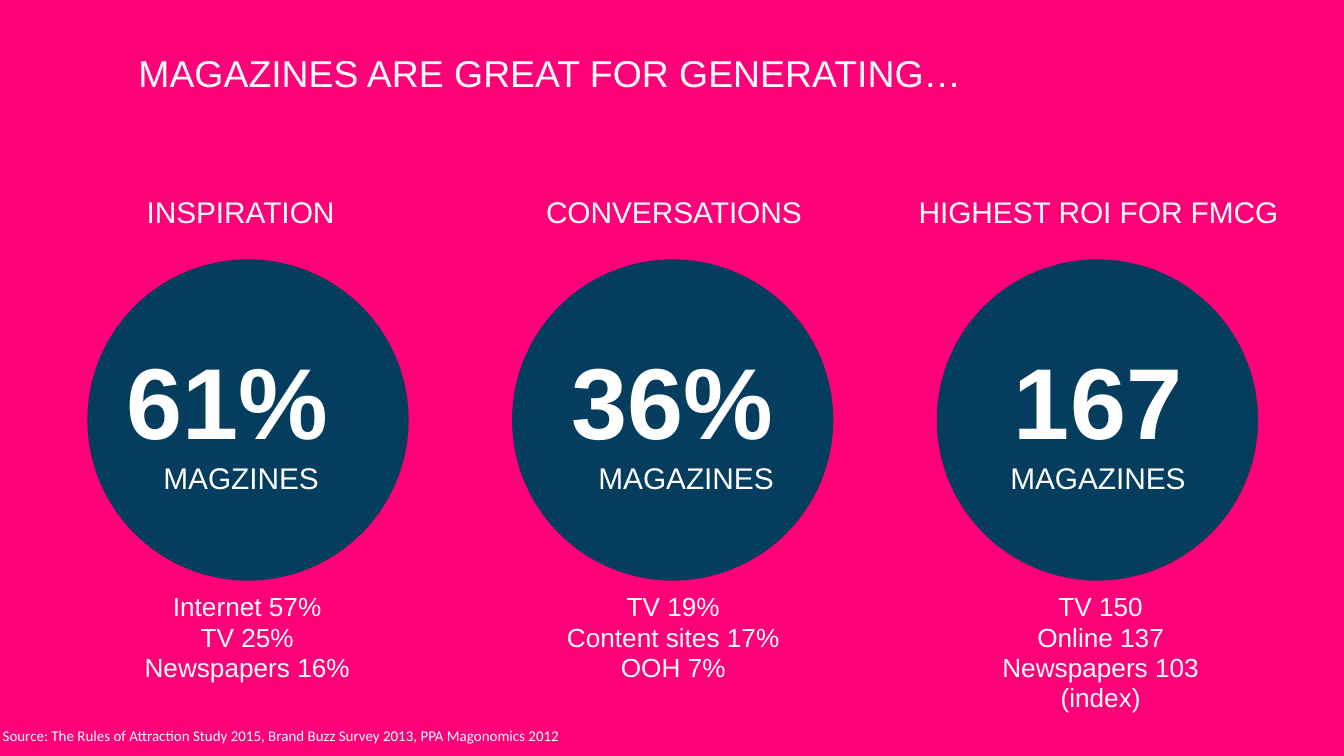
"""Build the slide on what magazines are great for generating."""
from dataclasses import dataclass

from lxml.etree import SubElement
from pptx import Presentation
from pptx.dml.color import RGBColor
from pptx.enum.shapes import MSO_SHAPE as Shape
from pptx.enum.text import MSO_ANCHOR as Anchor, MSO_AUTO_SIZE as Fit, PP_ALIGN as Align
from pptx.oxml.ns import qn
from pptx.util import Inches, Pt

PINK = RGBColor(0xFF, 0x00, 0x79)
NAVY = RGBColor(0x05, 0x3D, 0x5E)
WHITE = RGBColor(0xFF, 0xFF, 0xFF)
LEFT, STEP, SIZE = 0.65, 3.16, 2.39


@dataclass
class Span:
    left: float
    width: float


@dataclass
class Topic:
    head: str
    score: str
    label: str
    rows: list[str]
    top: Span
    mid: Span
    low: Span


TOPICS = [
    Topic("INSPIRATION", "61% ", "MAGZINES",
          ["Internet 57%", "TV 25%", "Newspapers 16%"],
          Span(0.63, 2.32), Span(0.25, 3.09), Span(0.21, 3.26)),
    Topic("CONVERSATIONS", "36% ", "MAGAZINES",
          ["TV 19%", "Content sites 17%", "OOH 7%"],
          Span(3.52, 2.99), Span(3.86, 2.49), Span(3.65, 2.72)),
    Topic("HIGHEST ROI FOR FMCG", "167", "MAGAZINES",
          ["TV 150", "Online 137", "Newspapers 103", "(index)"],
          Span(6.68, 2.99), Span(7.01, 2.32), Span(6.71, 2.96)),
]


def place(box, span: Span, top: float, high: float):
    """Move a box and give its text frame plain settings."""
    box.left, box.top = Inches(span.left), Inches(top)
    box.width, box.height = Inches(span.width), Inches(high)
    frame = box.text_frame
    frame.word_wrap = True
    frame.auto_size = Fit.NONE
    frame.vertical_anchor = Anchor.TOP
    return frame


def write(frame, text: str, *, size: float, font: str = "Arial", bold: bool = False,
          align=Align.CENTER, line=None, gap: float = 0) -> None:
    """Add one formatted paragraph to a frame."""
    first = not frame.text
    para = frame.paragraphs[0] if first else frame.add_paragraph()
    para.alignment = align
    para.line_spacing = line
    para.space_before = Pt(0 if first else gap)
    props = para._p.get_or_add_pPr()
    props.set("marL", "0")
    props.set("indent", "0")
    SubElement(props, qn("a:buNone"))
    run = para.add_run()
    run.text = text
    run.font.name, run.font.size, run.font.bold = font, Pt(size), bold
    run.font.color.rgb = WHITE


def disc(slide, left: float) -> None:
    """Draw one navy disc."""
    oval = slide.shapes.add_shape(Shape.OVAL, Inches(left), Inches(1.93),
                                  Inches(SIZE), Inches(SIZE))
    oval.shadow.inherit = False
    oval.fill.solid()
    oval.fill.fore_color.rgb = NAVY
    oval.line.fill.background()


def label(slide, span: Span, top: float, high: float):
    """Add an empty text box and return its frame."""
    return place(slide.shapes.add_textbox(0, 0, 0, 0), span, top, high)


def draw(slide, topic: Topic, body, left: float) -> None:
    """Draw one topic with its disc, figures and list."""
    disc(slide, left)
    write(label(slide, topic.top, 1.24, 0.7), topic.head, size=16, line=Pt(30))
    frame = label(slide, topic.mid, 2.47, 1.31)
    write(frame, topic.score, size=54, bold=True)
    write(frame, topic.label, size=16)
    frame = place(body, topic.low, 4.39, 1.21)
    for row in topic.rows:
        write(frame, row, size=14, line=0.8, gap=2.8)


def main() -> None:
    """Build and save the deck."""
    deck = Presentation()
    deck.slide_width = Inches(10)
    deck.slide_height = deck.slide_width * 9 // 16
    slide = deck.slides.add_slide(deck.slide_layouts.get_by_name("Comparison"))
    slide.background.fill.solid()
    slide.background.fill.fore_color.rgb = PINK

    title, *bodies, spare = slide.placeholders
    spare.element.getparent().remove(spare.element)
    write(place(title, Span(0.93, 9.07), 0.32, 0.77),
          "MAGAZINES ARE GREAT FOR GENERATING…", size=20, align=Align.LEFT)
    for i, (topic, body) in enumerate(zip(TOPICS, bodies)):
        draw(slide, topic, body, LEFT + i * STEP)

    frame = label(slide, Span(0, 6.16), 5.36, 0.26)
    frame.margin_left = Inches(0.02)
    write(frame, "Source: The Rules of Attraction Study 2015, "
          "Brand Buzz Survey 2013, PPA Magonomics 2012",
          size=8, font="Calibri", align=Align.LEFT)
    deck.save("out.pptx")


if __name__ == "__main__":
    main()
